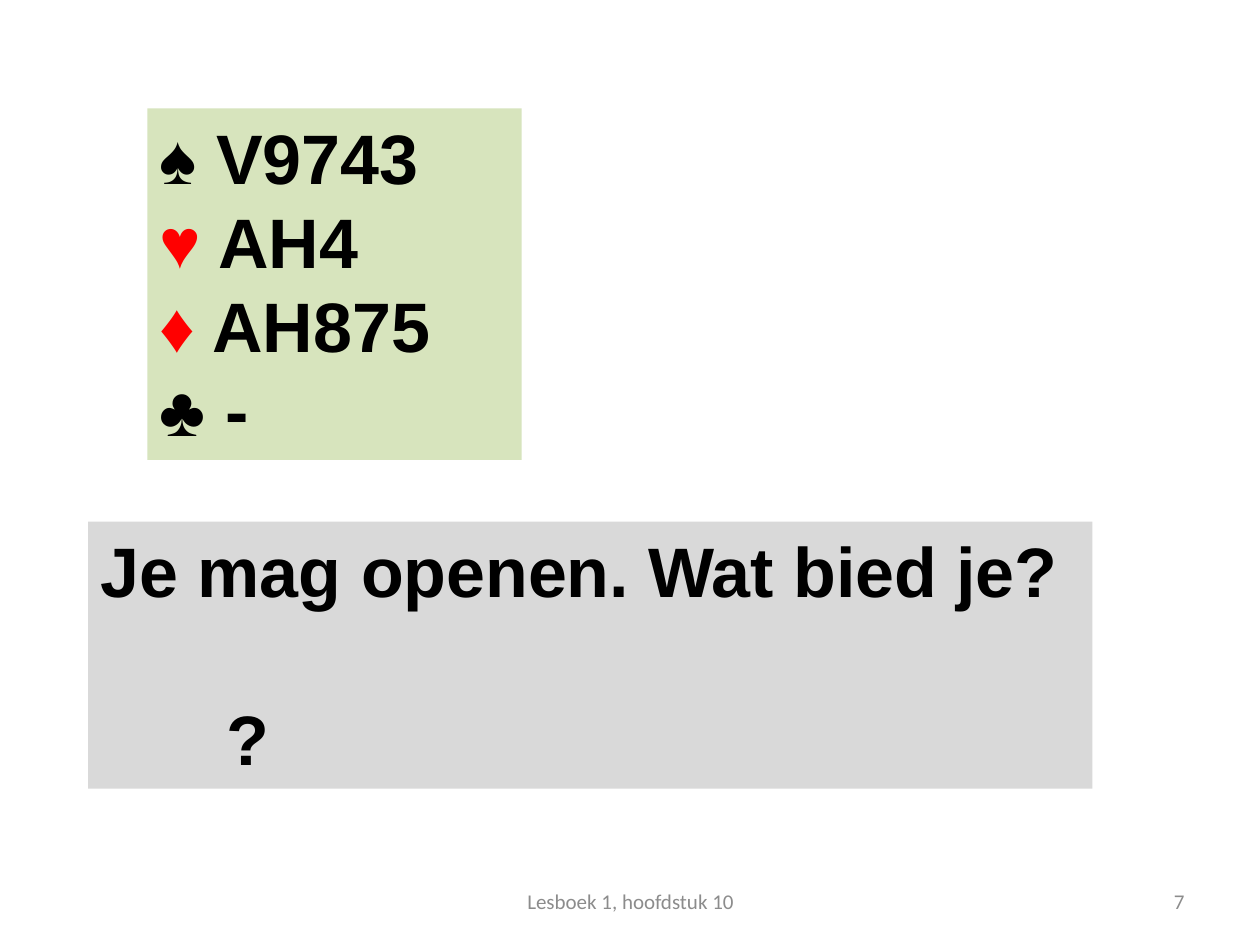
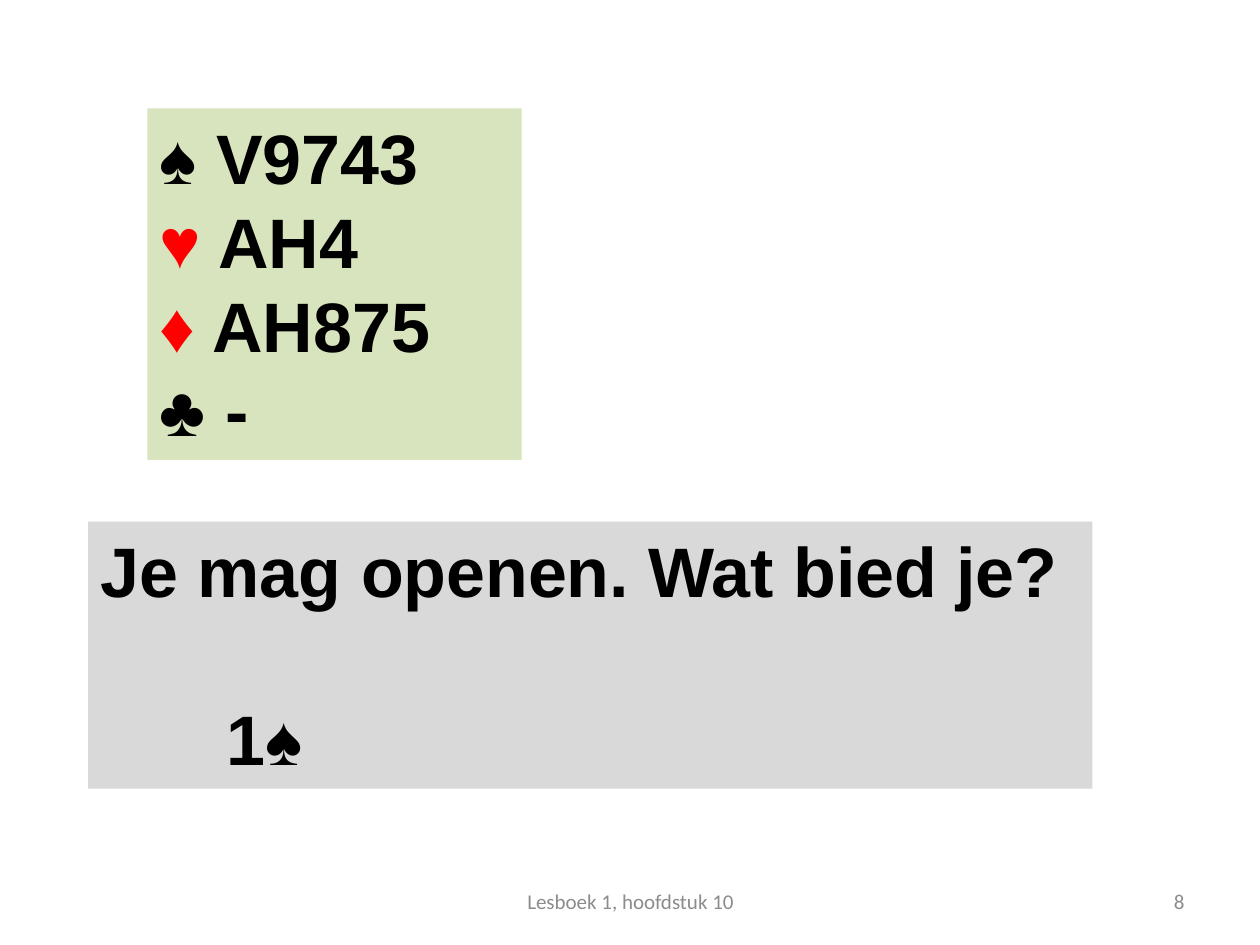
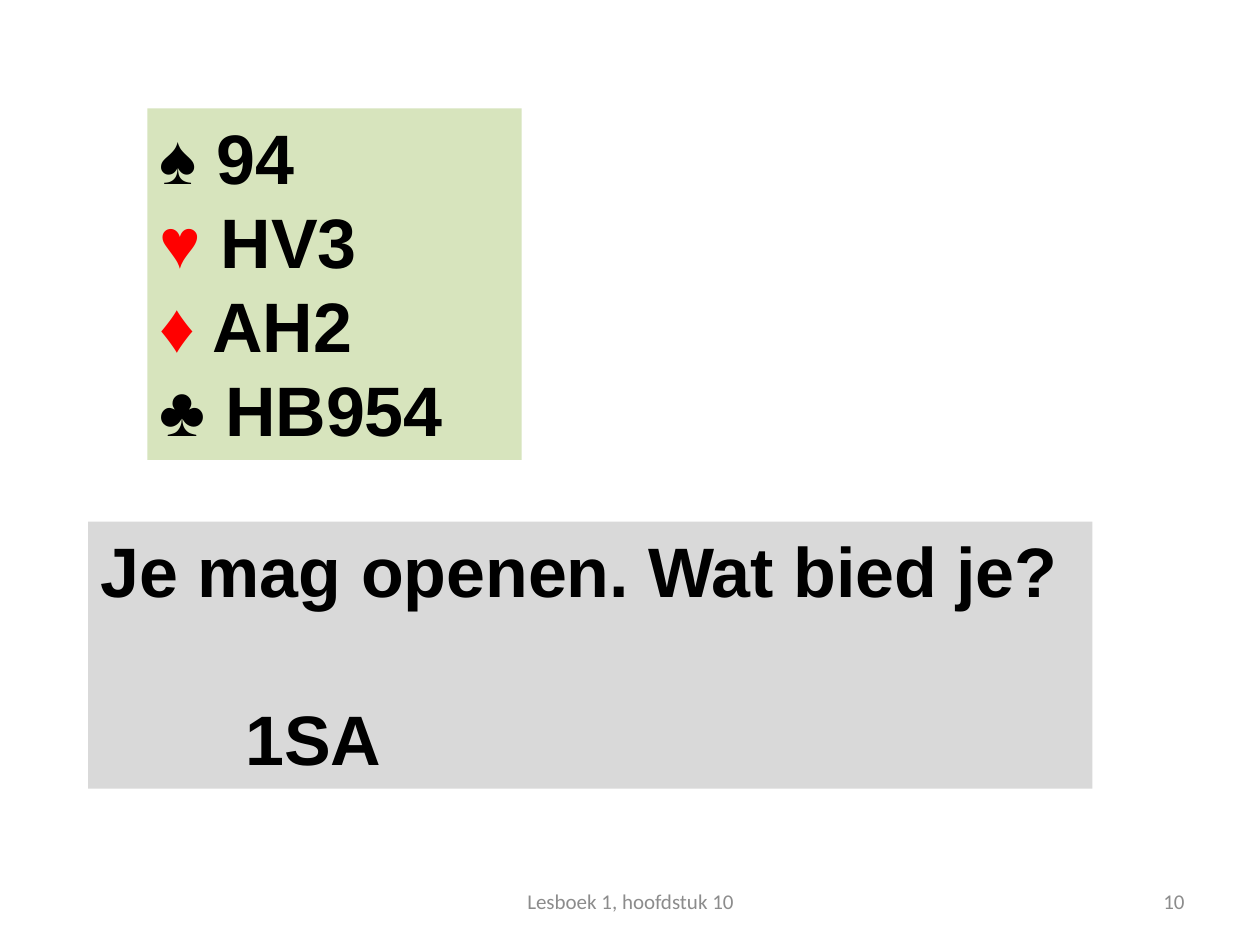
from pptx import Presentation
from pptx.dml.color import RGBColor
from pptx.enum.shapes import MSO_SHAPE as Shape
from pptx.enum.text import MSO_ANCHOR as Anchor, PP_ALIGN as Align
from pptx.util import Inches, Pt

WIDTH, HEIGHT = Inches(10), Inches(7.5)
COLOURS = {"hand": "D7E4BD", "question": "D9D9D9", "ink": "000000",
           "red_suit": "FF0000", "footer": "8C8C8C"}
SUITS = {"♠": "ink", "♥": "red_suit", "♦": "red_suit", "♣": "ink"}
LINE = Pt(48)

# Left, top, width and height as percentages of the slide
HAND_AREA = (11.7, 11.47, 29.7, 37.2)
QUESTION_AREA = (7, 55.2, 79.7, 28.27)
FOOTER_AREA = (34.2, 92.67, 31.7, 5.33)
NUMBER_AREA = (71.7, 92.67, 23.3, 5.33)

QUESTION = "Je mag openen. Wat bied je?"
FOOTER = "Lesboek 1, hoofdstuk 10"

# Page number, cards per suit, answer, answer indent in inches
V9743_HAND = ("V9743", "AH4", "AH875", "-")
DEALS = [
    (7, V9743_HAND, "?", 1),
    (8, V9743_HAND, "1♠", 1),
    (10, ("94", "HV3", "AH2", "HB954"), "1SA", 1.15),
]


def colour(name):
    return RGBColor.from_string(COLOURS[name])


def place(area):
    return [int(side * share / 100)
            for side, share in zip((WIDTH, HEIGHT) * 2, area)]


def add_span(para, text, font="Arial", size=40, bold=True, ink="ink"):
    span = para.add_run()
    span.text = text
    span.font.name, span.font.size, span.font.bold = font, Pt(size), bold
    span.font.color.rgb = colour(ink)


def add_panel(page, area, fill):
    panel = page.shapes.add_shape(Shape.RECTANGLE, *place(area))
    panel.shadow.inherit = False
    panel.fill.solid()
    panel.fill.fore_color.rgb = colour(fill)
    panel.line.fill.background()
    panel.text_frame.word_wrap = True
    panel.text_frame.vertical_anchor = Anchor.TOP
    return panel.text_frame


def add_line(frame, first=False):
    para = frame.paragraphs[0] if first else frame.add_paragraph()
    para.alignment = Align.LEFT
    para.line_spacing = LINE
    return para


def add_hand(page, hand):
    frame = add_panel(page, HAND_AREA, "hand")
    for row, ((suit, ink), cards) in enumerate(zip(SUITS.items(), hand)):
        para = add_line(frame, first=row == 0)
        add_span(para, suit, ink=ink)
        add_span(para, f" {cards}")


def add_question(page, answer, indent):
    frame = add_panel(page, QUESTION_AREA, "question")
    add_span(add_line(frame, first=True), QUESTION)
    para = add_line(frame)
    para.space_before = LINE
    properties = para._p.get_or_add_pPr()
    properties.set("marL", str(Inches(indent)))
    properties.set("indent", "0")
    add_span(para, answer)


def add_footer_text(page, area, text, align):
    box = page.shapes.add_textbox(*place(area))
    box.text_frame.word_wrap = True
    box.text_frame.vertical_anchor = Anchor.MIDDLE
    para = box.text_frame.paragraphs[0]
    para.alignment = align
    add_span(para, text, font="Calibri", size=12, bold=False, ink="footer")


def main():
    deck = Presentation()
    deck.slide_width, deck.slide_height = WIDTH, HEIGHT
    for number, hand, answer, indent in DEALS:
        page = deck.slides.add_slide(deck.slide_layouts[6])
        add_hand(page, hand)
        add_question(page, answer, indent)
        add_footer_text(page, NUMBER_AREA, str(number), Align.RIGHT)
        add_footer_text(page, FOOTER_AREA, FOOTER, Align.CENTER)
    deck.save("out.pptx")


if __name__ == "__main__":
    main()
